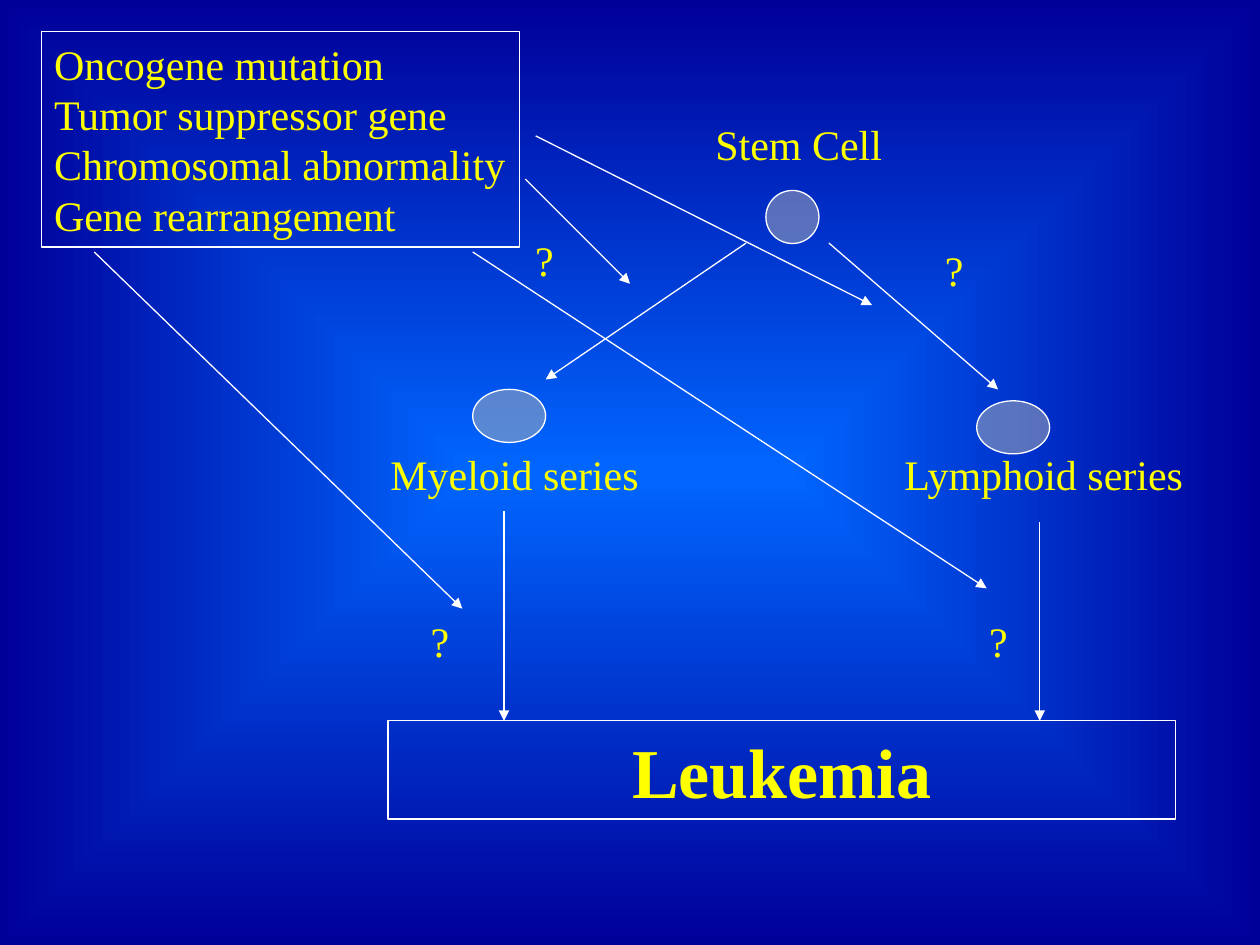
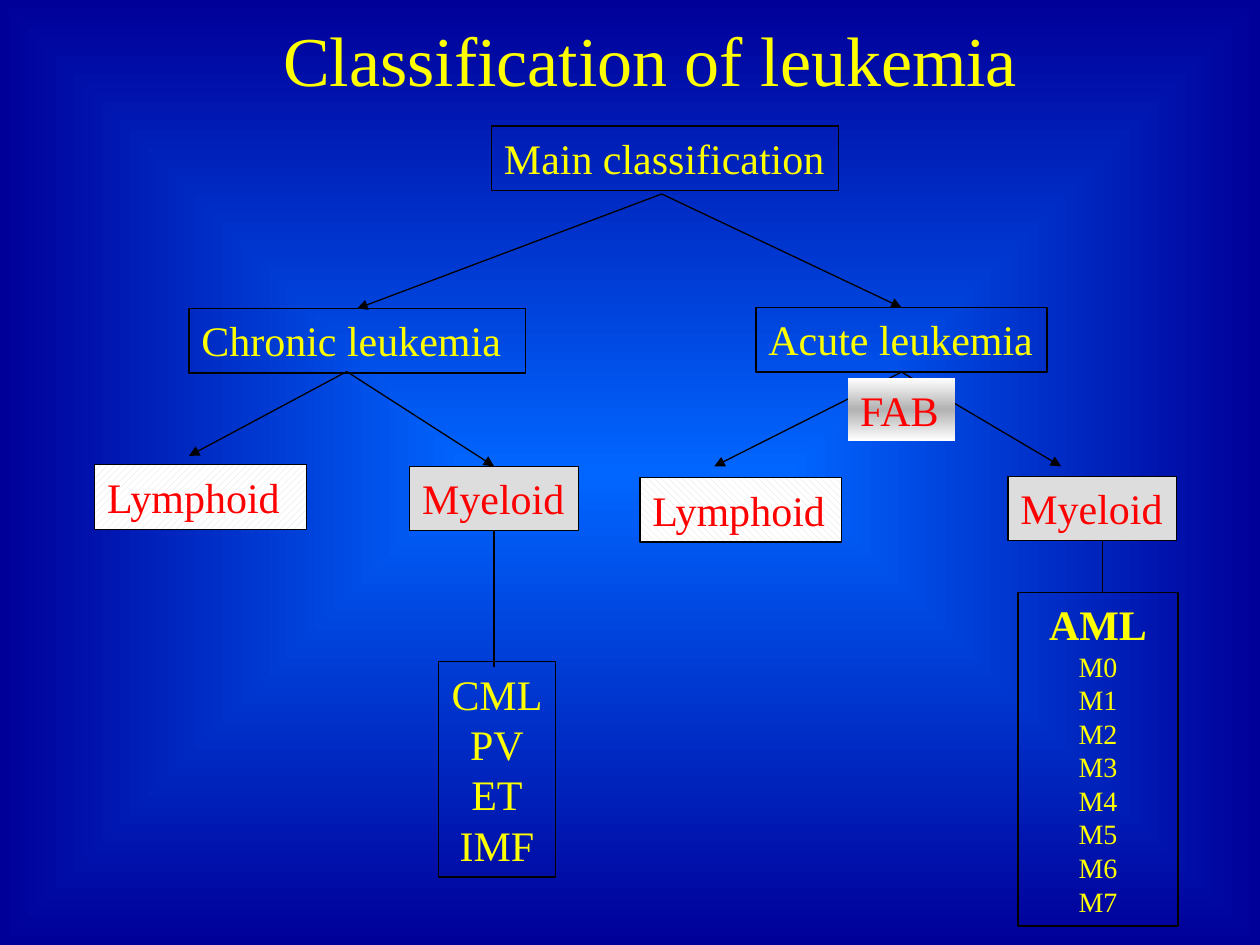
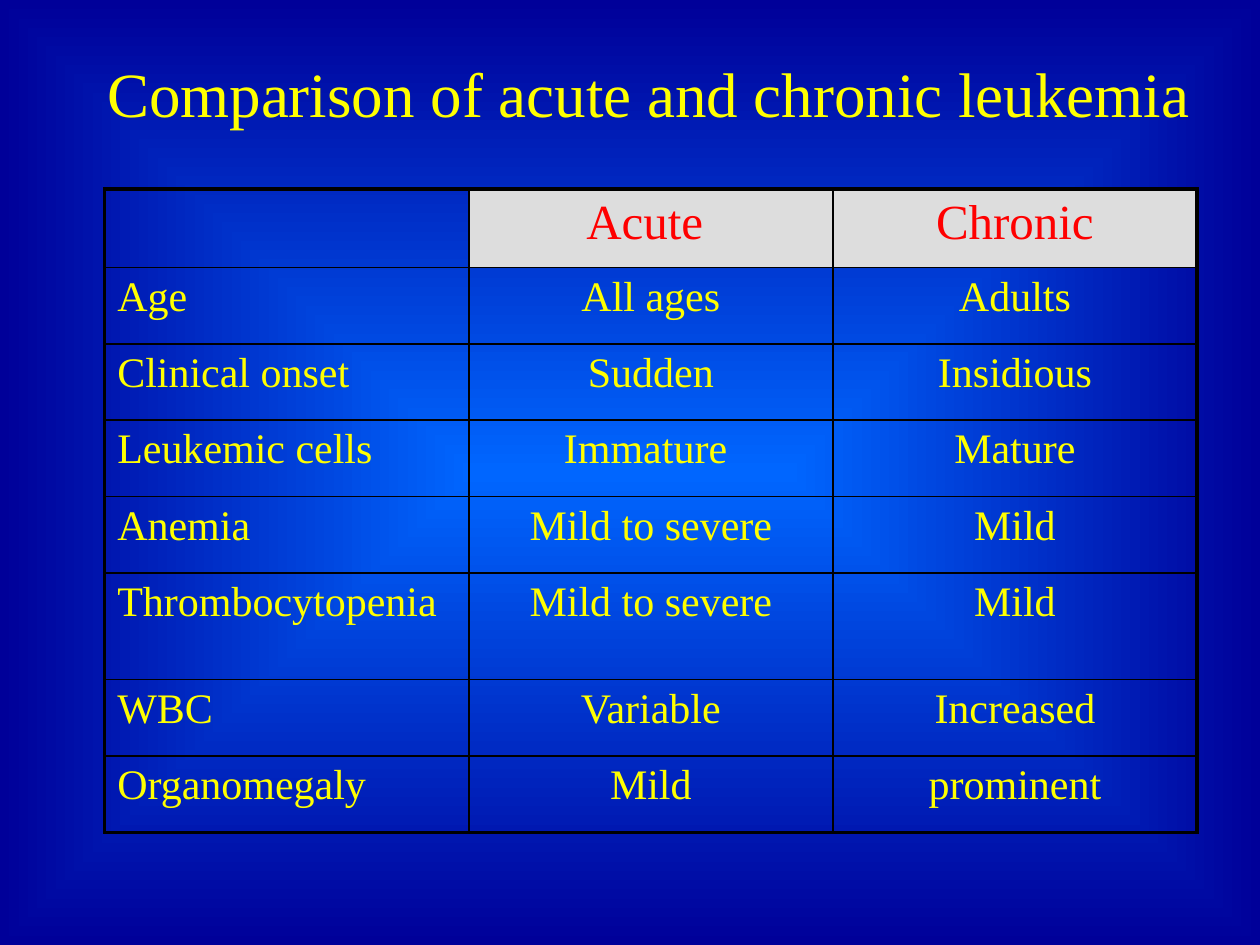
from dataclasses import dataclass

from pptx import Presentation
from pptx.dml.color import RGBColor
from pptx.enum.dml import MSO_PATTERN
from pptx.enum.shapes import MSO_CONNECTOR, MSO_SHAPE
from pptx.enum.text import MSO_ANCHOR, MSO_AUTO_SIZE, PP_ALIGN
from pptx.oxml import parse_xml
from pptx.oxml.ns import nsdecls, qn
from pptx.util import Cm, Pt

RECT, OVAL = MSO_SHAPE.RECTANGLE, MSO_SHAPE.OVAL
STRAIGHT = MSO_CONNECTOR.STRAIGHT
LEFT, CENTER = PP_ALIGN.LEFT, PP_ALIGN.CENTER
TOP, BOTTOM = MSO_ANCHOR.TOP, MSO_ANCHOR.BOTTOM
NO_FIT = MSO_AUTO_SIZE.NONE
UP_STRIPES = MSO_PATTERN.WIDE_UPWARD_DIAGONAL
DOWN_STRIPES = MSO_PATTERN.WIDE_DOWNWARD_DIAGONAL
TITLE_ONLY, BLANK = 5, 6
TOP_SIDE, BOTTOM_SIDE = 0, 2


@dataclass(frozen=True)
class Theme:
    font: str = "Times New Roman"
    text: str = "FFFF00"
    accent: str = "FF0000"
    white: str = "FFFFFF"
    black: str = "000000"
    panel: str = "DDDDDD"
    gray: str = "B2B2B2"
    glow: str = "0066FF"
    navy: str = "000099"
    big: int = 40
    title: int = 36
    head: int = 28
    body: int = 24
    small: int = 16
    line: float = 0.75
    grid: float = 1
    frame: float = 2.25


T = Theme()


def rgb(color):
    return RGBColor.from_string(color)


def set_gradient(parent, colors, direction):
    """Replace the solid fill in parent by evenly spaced gradient stops."""
    step = 100000 // (len(colors) - 1)
    stops = "".join(f'<a:gs pos="{i * step}"><a:srgbClr val="{c}"/></a:gs>'
                    for i, c in enumerate(colors))
    grad = parse_xml(f'<a:gradFill {nsdecls("a")} rotWithShape="1">'
                     f'<a:gsLst>{stops}</a:gsLst>{direction}</a:gradFill>')
    parent.replace(parent.find(qn("a:solidFill")), grad)


class Deck:
    def __init__(self, theme):
        self.t = theme
        self.line_color = theme.white
        self.prs = Presentation()
        self.prs.slide_width, self.prs.slide_height = Cm(25.4), Cm(19.05)
        # Shared background on the master
        master = self.prs.slide_master
        master.background.fill.solid()
        set_gradient(next(master.element.iter(qn("p:bgPr"))), (theme.glow, theme.navy),
                     '<a:path path="shape"><a:fillToRect l="50000" t="50000" '
                     'r="50000" b="50000"/></a:path>')

    def slide(self, layout, line_color):
        self.s = self.prs.slides.add_slide(self.prs.slide_layouts[layout])
        self.line_color = line_color

    def add_text(self, tf, lines, size, color=None, align=LEFT, bold=False, heading=None):
        rows = [(line, size, bold) for line in lines]
        if heading:
            rows.insert(0, (heading, self.t.body, True))
        for i, (text, points, strong) in enumerate(rows):
            p = tf.add_paragraph() if i else tf.paragraphs[0]
            p.alignment = align
            r = p.add_run()
            r.text = text
            r.font.name, r.font.size, r.font.bold = self.t.font, Pt(points), strong
            r.font.color.rgb = rgb(color or self.t.text)

    def setup(self, tf, align=LEFT, anchor=TOP):
        tf.word_wrap, tf.auto_size, tf.vertical_anchor = True, NO_FIT, anchor
        tf.margin_left = Cm(0.25) if align == LEFT else 0
        tf.margin_right = 0
        tf.margin_top = tf.margin_bottom = Cm(0.13)

    def title(self, text, x, y, w, h, size):
        sp = self.s.shapes.title
        sp.left, sp.top, sp.width, sp.height = Cm(x), Cm(y), Cm(w), Cm(h)
        self.setup(sp.text_frame)
        self.add_text(sp.text_frame, [text], size)

    def label(self, text, x, y, w, h=1.27):
        sp = self.s.shapes.add_textbox(Cm(x), Cm(y), Cm(w), Cm(h))
        self.setup(sp.text_frame)
        self.add_text(sp.text_frame, [text], self.t.body)

    def shape(self, kind, x, y, w, h, fill=None):
        sp = self.s.shapes.add_shape(kind, Cm(x), Cm(y), Cm(w), Cm(h))
        sp.shadow.inherit = False
        if fill:
            sp.fill.solid()
            sp.fill.fore_color.rgb = rgb(fill)
        else:
            sp.fill.background()
        sp.line.color.rgb = rgb(self.line_color)
        sp.line.width = Pt(self.t.line)
        return sp

    def box(self, lines, x, y, w, h=1.3, fill=None, size=None, align=LEFT,
            anchor=TOP, **style):
        sp = self.shape(RECT, x, y, w, h, fill)
        self.setup(sp.text_frame, align, anchor)
        self.add_text(sp.text_frame, lines, size or self.t.body, align=align, **style)
        return sp

    def striped_box(self, text, x, y, w, pattern):
        sp = self.box([text], x, y, w, color=self.t.accent)
        sp.fill.patterned()
        sp.fill.pattern = pattern
        sp.fill.fore_color.rgb = rgb(self.t.panel)
        sp.fill.back_color.rgb = rgb(self.t.white)

    def shaded_box(self, text, x, y, w, h):
        sp = self.box([text], x, y, w, h, fill=self.t.gray, color=self.t.accent)
        sp.line.fill.background()
        set_gradient(sp.element.spPr, (self.t.white, self.t.gray, self.t.white),
                     '<a:lin ang="5400000" scaled="1"/>')

    def cell(self, x, y, w):
        sp = self.shape(OVAL, x, y, w, 1.07, self.t.gray)
        color = sp.element.spPr.find(qn("a:solidFill"))[0]
        color.append(parse_xml(f'<a:alpha {nsdecls("a")} val="50000"/>'))

    def line(self, start, end, begin=None, finish=None, arrow=True):
        """Draw from start to end; begin and finish are (shape, side) joints."""
        c = self.s.shapes.add_connector(STRAIGHT, *map(Cm, start + end))
        if begin:
            c.begin_connect(*begin)
        if finish:
            c.end_connect(*finish)
        c.line.color.rgb = rgb(self.line_color)
        c.line.width = Pt(self.t.line)
        spPr = c.element.spPr
        if arrow:
            spPr.find(qn("a:ln")).append(
                parse_xml(f'<a:tailEnd {nsdecls("a")} type="triangle"/>'))
        spPr.append(parse_xml(f'<a:effectLst {nsdecls("a")}/>'))

    def borders(self, cell, widths):
        """Set the left, right, top and bottom border of a cell."""
        tcPr = cell._tc.get_or_add_tcPr()
        for i, (side, width) in enumerate(zip("LRTB", widths)):
            tcPr.insert(i, parse_xml(
                f'<a:ln{side} {nsdecls("a")} w="{Pt(width)}"><a:solidFill>'
                f'<a:srgbClr val="{self.t.black}"/></a:solidFill></a:ln{side}>'))

    def table(self, data, x, y, col_width, heights):
        n_rows, n_cols = len(data), len(data[0])
        table = self.s.shapes.add_table(n_rows, n_cols, Cm(x), Cm(y), Cm(col_width * n_cols),
                                        Cm(sum(heights))).table
        table.first_row = table.horz_banding = False
        for col in table.columns:
            col.width = Cm(col_width)
        for i, (row, height) in enumerate(zip(data, heights)):
            table.rows[i].height = Cm(height)
            for j, text in enumerate(row):
                cell = table.cell(i, j)
                header = i == 0 and j > 0
                if header:
                    cell.fill.solid()
                    cell.fill.fore_color.rgb = rgb(self.t.panel)
                else:
                    cell.fill.background()
                outer = (j == 0, j == n_cols - 1, i == 0, i == n_rows - 1)
                self.borders(cell, [self.t.frame if o else self.t.grid for o in outer])
                if text:
                    self.add_text(cell.text_frame, [text],
                                  self.t.head if header else self.t.body,
                                  self.t.accent if header else self.t.text,
                                  CENTER if j else LEFT)


def origin_slide(d):
    d.slide(BLANK, T.white)
    # Outcome and causes
    d.box(["Leukemia"], 7.82, 14.53, 15.88, 1.98, size=T.big, align=CENTER,
          anchor=BOTTOM, bold=True)
    d.box(["Oncogene mutation", "Tumor suppressor gene", "Chromosomal abnormality",
           "Gene rearrangement"], 0.84, 0.64, 9.63, 4.34)
    # Cells and their names
    for x, y, w in ((15.44, 3.84, 1.07), (9.53, 7.85, 1.47), (19.69, 8.08, 1.47)):
        d.cell(x, y, w)
    d.label("Stem Cell", 14.17, 2.26, 3.86)
    d.label("Myeloid series", 7.62, 8.92, 5.51)
    d.label("Lymphoid series", 17.98, 8.92, 6.17)
    for x, y in ((10.54, 4.6), (18.8, 4.8), (8.43, 12.27), (19.69, 12.27)):
        d.label("?", x, y, 0.89)
    # Differentiation, then the influence of each cause
    for start, end in (((15.04, 4.9), (11, 7.65)), ((16.71, 4.9), (20.12, 7.85)),
                       ((10.16, 10.31), (10.16, 14.53)), ((20.96, 10.52), (20.96, 14.53)),
                       ((10.59, 3.61), (12.7, 5.72)), ((10.8, 2.74), (17.58, 6.15)),
                       ((1.9, 5.08), (9.32, 12.27)), ((9.53, 5.08), (19.89, 11.86))):
        d.line(start, end)


def classification_slide(d):
    d.slide(TITLE_ONLY, T.black)
    d.title("Classification of leukemia", 5.46, 0.2, 15.34, 1.96, T.big)
    # Tree boxes
    d.box(["Main classification"], 9.91, 2.54, 6.99)
    chronic = d.box(["Chronic leukemia"], 3.81, 6.22, 6.78)
    acute = d.box(["Acute leukemia"], 15.24, 6.2, 5.87)
    d.striped_box("Lymphoid", 1.91, 9.37, 4.27, UP_STRIPES)
    d.striped_box("Lymphoid", 12.9, 9.63, 4.06, DOWN_STRIPES)
    myeloid, _ = [d.box(["Myeloid"], x, y, 3.4, fill=T.panel, color=T.accent)
                  for x, y in ((8.26, 9.4), (20.32, 9.6))]
    # Branches
    root, chronic_fork, acute_fork = (13.34, 3.91), (6.99, 7.49), (18.21, 7.49)
    d.line(root, (7.19, 6.22), finish=(chronic, TOP_SIDE))
    d.line(root, (18.21, 6.22), finish=(acute, TOP_SIDE))
    for x in (14.4, 21.39):
        d.line(acute_fork, (x, 9.4), begin=(acute, BOTTOM_SIDE))
    d.line(chronic_fork, (3.81, 9.19))
    d.line(chronic_fork, (9.96, 9.4), finish=(myeloid, TOP_SIDE))
    # Subtypes
    d.shaded_box("FAB", 17.09, 7.62, 2.16, 1.27)
    d.box([f"M{i}" for i in range(8)], 20.52, 11.94, 3.23, 6.73, size=T.small,
          align=CENTER, heading="AML")
    d.box(["CML", "PV", "ET", "IMF"], 8.84, 13.34, 2.36, 4.34, align=CENTER)
    d.line((9.96, 10.7), (9.96, 13.44), begin=(myeloid, BOTTOM_SIDE), arrow=False)
    d.line((22.23, 10.9), (22.23, 11.94), arrow=False)


def comparison_slide(d):
    d.slide(TITLE_ONLY, T.black)
    d.title("Comparison of acute and chronic leukemia", 1.91, 0.97, 22.35, 1.78, T.title)
    d.table([("", "Acute ", "Chronic"),
             ("Age", "All ages", "Adults"),
             ("Clinical onset", "Sudden", "Insidious"),
             ("Leukemic cells", "Immature ", "Mature"),
             ("Anemia", "Mild to severe", "Mild"),
             ("Thrombocytopenia", "Mild to severe", "Mild"),
             ("WBC", "Variable", "Increased"),
             ("Organomegaly", "Mild", "prominent")],
            2.11, 3.81, 7.34, [1.58] + [1.54] * 4 + [2.15] + [1.54] * 2)


def main():
    d = Deck(T)
    origin_slide(d)
    classification_slide(d)
    comparison_slide(d)
    d.prs.save("out.pptx")


if __name__ == "__main__":
    main()
